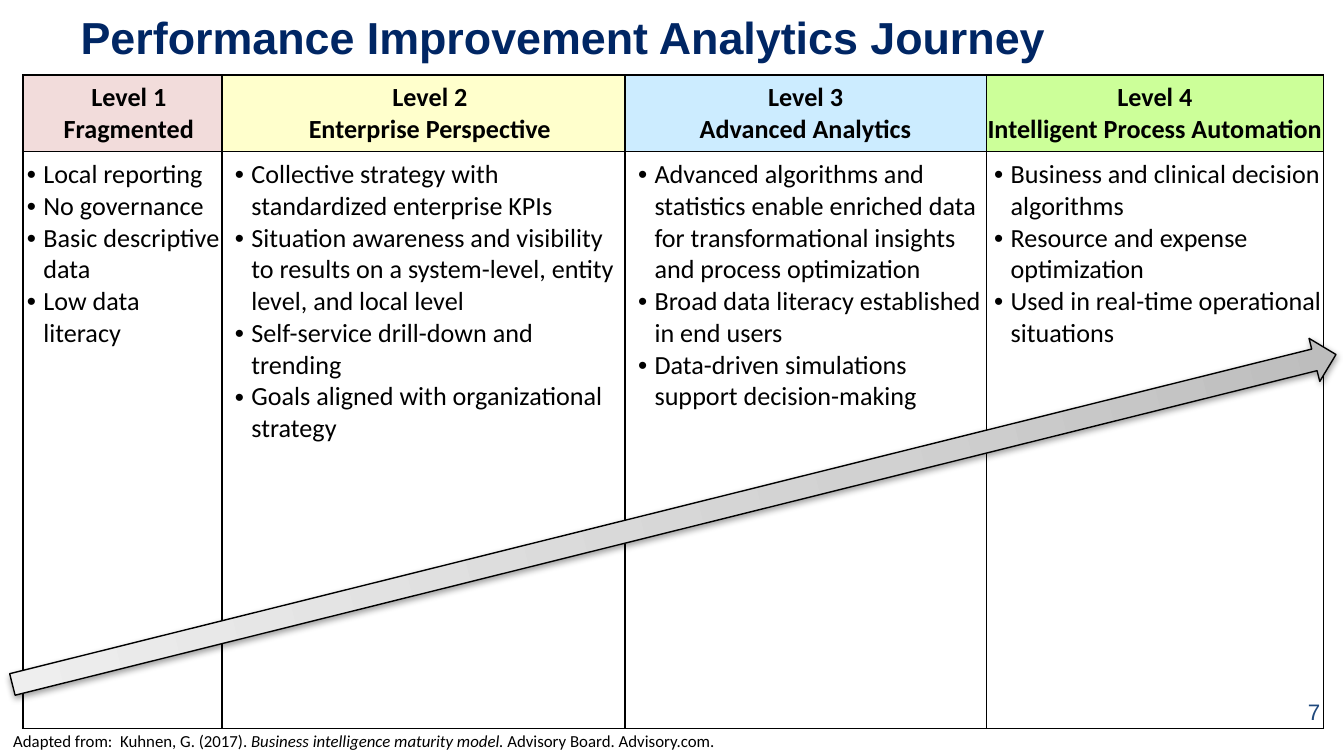
from dataclasses import dataclass
from lxml import etree
from pptx import Presentation
from pptx import util as u
from pptx.dml import color
from pptx.enum import shapes, text
from pptx.oxml import ns

Cm, Pt = u.Cm, u.Pt


@dataclass(frozen=True)
class Theme:
    title_font: str = "Arial"
    body_font: str = "Calibri"
    title: str = "002664"
    number: str = "1F497D"
    ink: str = "000000"
    arrow_stops: tuple = ((0, "BDBDBD"), (35, "D1D1D1"), (100, "EEEEEE"))
    title_size: float = 24
    body_size: float = 14
    number_size: float = 12
    source_size: float = 9
    inset: float = 0.25
    inset_y: float = 0.13


THEME = Theme()


@dataclass(frozen=True)
class Level:
    name: str
    stage: str
    fill: str
    width: float
    points: tuple
    head_insets: tuple = (THEME.inset, 0)
    body_insets: tuple = (THEME.inset, 0)
    indent: float = 0.31


LEVELS = (
    Level("Level 1", "Fragmented", "F2DCDB", 3.76, (
        "Local reporting",
        "No governance",
        "Basic descriptive data",
        "Low data literacy",
    ), body_insets=(0.08, 0)),
    Level("Level 2", "Enterprise Perspective", "FFFFCC", 7.62, (
        "Collective strategy with standardized enterprise KPIs",
        "Situation awareness and visibility to results on a system-level, "
        "entity level, and local level",
        "Self-service drill-down and trending",
        "Goals aligned with organizational strategy",
    )),
    Level("Level 3", "Advanced Analytics", "CCECFF", 6.83, (
        "Advanced algorithms and statistics enable enriched data for "
        "transformational insights and process optimization",
        "Broad data literacy established in end users",
        "Data-driven simulations support decision-making",
    ), head_insets=(THEME.inset, THEME.inset)),
    Level("Level 4", "Intelligent Process Automation", "CCFF99", 6.37, (
        "Business and clinical decision algorithms",
        "Resource and expense optimization",
        "Used in real-time operational situations",
    ), head_insets=(0, 0), body_insets=(0, 0), indent=0.46),
)


def rgb(value):
    return color.RGBColor.from_string(value)


def add_run(paragraph, words, size, font=THEME.body_font, ink=THEME.ink,
            bold=False, italic=False):
    run = paragraph.add_run()
    run.text = words
    run.font.name, run.font.size = font, Pt(size)
    run.font.bold, run.font.italic = bold, italic
    run.font.color.rgb = rgb(ink)


def paragraphs(frame, count):
    return [frame.paragraphs[0]] + [frame.add_paragraph() for _ in range(count - 1)]


def set_bullet(paragraph, margin, hanging=0.31):
    props = paragraph._p.get_or_add_pPr()
    props.set("marL", str(Cm(margin)))
    props.set("indent", str(-Cm(hanging)))
    etree.SubElement(props, ns.qn("a:buFont")).set("typeface", "Arial")
    etree.SubElement(props, ns.qn("a:buChar")).set("char", "•")


def set_cell(cell, insets, fill=None):
    cell.margin_left, cell.margin_right = (Cm(i) for i in insets)
    cell.margin_top = cell.margin_bottom = Cm(THEME.inset_y)
    cell.vertical_anchor = text.MSO_ANCHOR.TOP
    # Borders come before the fill in the cell properties
    props = cell._tc.get_or_add_tcPr()
    for side in ("lnL", "lnR", "lnT", "lnB"):
        border = etree.SubElement(props, ns.qn(f"a:{side}"), w=str(Pt(1)))
        solid = etree.SubElement(border, ns.qn("a:solidFill"))
        etree.SubElement(solid, ns.qn("a:srgbClr"), val=THEME.ink)
    if fill:
        cell.fill.solid()
        cell.fill.fore_color.rgb = rgb(fill)
    else:
        cell.fill.background()


def place_title(slide, box, words):
    title = slide.shapes.title
    title.left, title.top, title.width, title.height = map(Cm, box)
    frame = title.text_frame
    frame.word_wrap = True
    frame.vertical_anchor = text.MSO_ANCHOR.MIDDLE
    frame.paragraphs[0].alignment = text.PP_ALIGN.LEFT
    add_run(frame.paragraphs[0], words, THEME.title_size, THEME.title_font,
            THEME.title, bold=True)


def place_levels(slide, box, header_height):
    left, top, width, height = box
    table = slide.shapes.add_table(2, len(LEVELS), *map(Cm, box)).table
    table.first_row = table.horz_banding = False
    table.rows[0].height = Cm(header_height)
    table.rows[1].height = Cm(height - header_height)
    for i, level in enumerate(LEVELS):
        table.columns[i].width = Cm(level.width)
        head, body = table.cell(0, i), table.cell(1, i)
        set_cell(head, level.head_insets, level.fill)
        set_cell(body, level.body_insets)
        for paragraph, words in zip(paragraphs(head.text_frame, 2),
                                    (level.name, level.stage)):
            paragraph.alignment = text.PP_ALIGN.CENTER
            add_run(paragraph, words, THEME.body_size, bold=True)
        for paragraph, words in zip(paragraphs(body.text_frame, len(level.points)),
                                    level.points):
            set_bullet(paragraph, level.indent)
            add_run(paragraph, words, THEME.body_size)


def place_journey_arrow(slide, box, rotation):
    arrow = slide.shapes.add_shape(shapes.MSO_SHAPE.UP_ARROW, *map(Cm, box))
    arrow.rotation = rotation
    arrow.line.color.rgb = rgb(THEME.ink)
    arrow.line.width = Pt(0.75)
    # Three-stop gradient, darkest at the head
    stops = "".join(f'<a:gs pos="{pos * 1000}"><a:srgbClr val="{tone}"/></a:gs>'
                    for pos, tone in THEME.arrow_stops)
    gradient = etree.fromstring(
        f'<a:gradFill {ns.nsdecls("a")} rotWithShape="1"><a:gsLst>{stops}</a:gsLst>'
        '<a:lin ang="5400000" scaled="0"/></a:gradFill>')
    props = arrow._element.spPr
    props.find(ns.qn("a:prstGeom")).addnext(gradient)
    # Soft shadow below
    props.append(etree.fromstring(
        f'<a:effectLst {ns.nsdecls("a")}><a:outerShdw blurRad="{Pt(3.1)}" '
        f'dist="{Pt(1.6)}" dir="5400000" rotWithShape="0"><a:srgbClr val="{THEME.ink}">'
        '<a:alpha val="38000"/></a:srgbClr></a:outerShdw></a:effectLst>'))


def place_note(slide, box, runs, align=text.PP_ALIGN.LEFT):
    frame = slide.shapes.add_textbox(*map(Cm, box)).text_frame
    frame.word_wrap = True
    frame.paragraphs[0].alignment = align
    for words, style in runs:
        add_run(frame.paragraphs[0], words, **style)


def build_journey_slide(deck):
    slide = deck.slides.add_slide(deck.slide_layouts[5])
    place_title(slide, (1.27, -0.05, 22.86, 1.47),
                "Performance Improvement Analytics Journey")
    # Page number and source line
    place_note(slide, (20.12, 13.08, 5.08, 0.76), [
        ("7", dict(size=THEME.number_size, font=THEME.title_font, ink=THEME.number)),
    ], text.PP_ALIGN.RIGHT)
    source = dict(size=THEME.source_size)
    place_note(slide, (0, 13.69, 16.31, 0.64), [
        ("Adapted from:  Kuhnen, G. (2017). ", source),
        ("Business intelligence maturity model. ", dict(source, italic=True)),
        ("Advisory Board. Advisory.com.", source),
    ])
    # Maturity levels with the rising arrow across them
    table_width = sum(level.width for level in LEVELS)
    place_levels(slide, (0.43, 1.42, table_width, 12.34), header_height=1.44)
    place_journey_arrow(slide, (12.32, -3.07, 0.84, 25.78), rotation=76)


def main():
    deck = Presentation()
    deck.slide_width, deck.slide_height = Cm(25.4), Cm(14.29)
    build_journey_slide(deck)
    deck.save("out.pptx")


if __name__ == "__main__":
    main()
